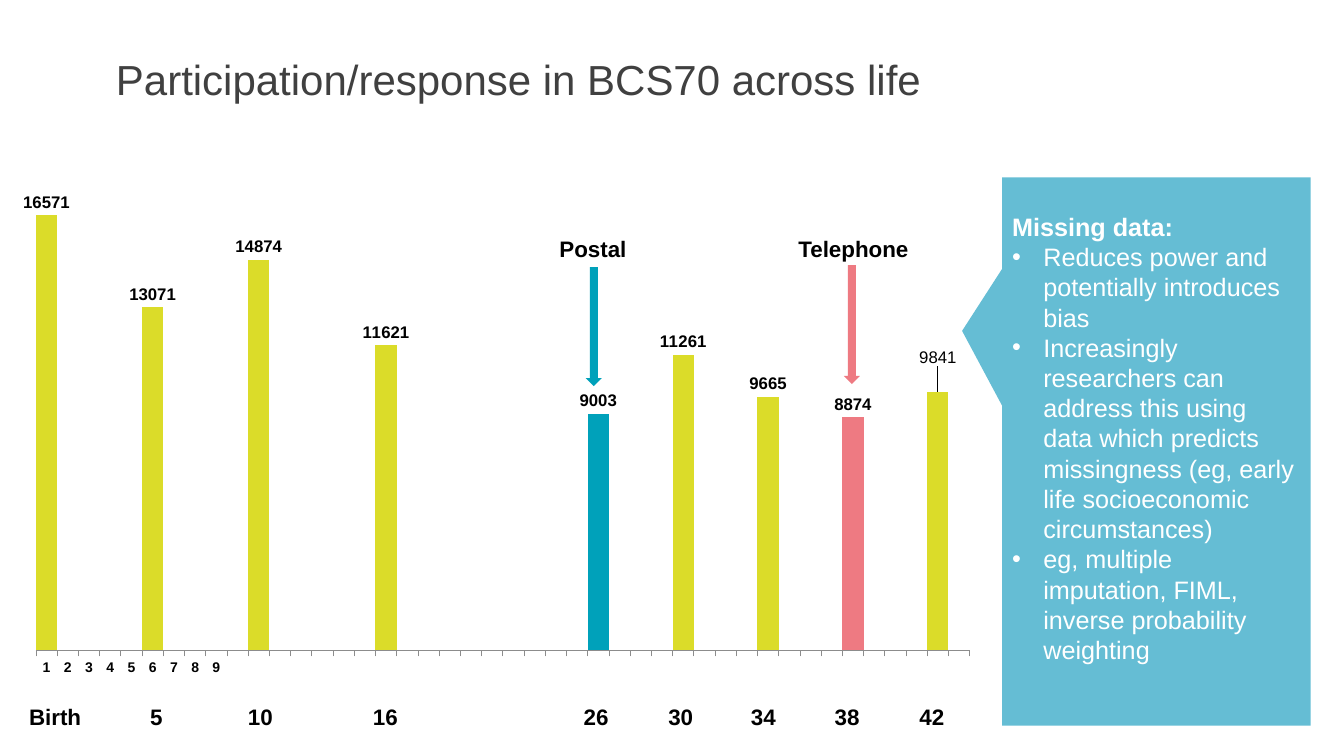
from lxml import etree
from pptx import Presentation
from pptx import util as u
from pptx.chart.data import CategoryChartData
from pptx.dml.color import RGBColor
from pptx.enum import chart as charts, shapes, text
from pptx.oxml import parse_xml
from pptx.oxml.ns import nsdecls, qn

FONT = "Arial"
COLOURS = {
    "black": "000000",
    "white": "FFFFFF",
    "title": "404040",
    "axis": "8C8C8C",
    "cohort": "DBDC29",
    "postal": "00A1BA",
    "telephone": "EE7A82",
    "callout": "65BDD4",
}
RESPONSES = {0: 16571, 5: 13071, 10: 14874, 16: 11621, 26: 9003,
             30: 11261, 34: 9665, 38: 8874, 42: 9842}
HIGHLIGHTS = {26: "postal", 38: "telephone"}
AGE_LABELS = [("Birth", 0.19), ("5", 1.39), ("10", 2.36), ("16", 3.6), ("26", 5.69),
              ("30", 6.53), ("34", 7.35), ("38", 8.18), ("42", 9.02)]
MODES = [("Postal", 5.45, 5.81, 2.65, "postal"),
         ("Telephone", 7.82, 8.37, 2.63, "telephone")]
MISSING_DATA_POINTS = [
    "Reduces power and potentially introduces bias",
    "Increasingly researchers can address this using data which predicts "
    "missingness (eg, early life socioeconomic circumstances)",
    "eg, multiple imputation, FIML, inverse probability weighting",
]
LEADER_LINES_OFF = (
    f'<c:extLst {nsdecls("c")}><c:ext uri="{{CE6537A1-D6FC-4f65-9D91-7224C49458BB}}" '
    'xmlns:c15="http://schemas.microsoft.com/office/drawing/2012/chart">'
    '<c15:showLeaderLines val="0"/></c:ext></c:extLst>')


def colour(name):
    return RGBColor.from_string(COLOURS[name])


def format_font(font, size, name="black", bold=False):
    font.name = FONT
    font.size = u.Pt(size)
    font.bold = bold
    font.color.rgb = colour(name)


def write_text(paragraph, content, size=16, name="black", bold=True):
    paragraph.alignment = text.PP_ALIGN.LEFT
    run = paragraph.add_run()
    run.text = content
    format_font(run.font, size, name, bold)


def add_label(slide, content, left, top, width):
    box = slide.shapes.add_textbox(
        u.Inches(left), u.Inches(top), u.Inches(width), u.Inches(0.37))
    box.text_frame.word_wrap = True
    write_text(box.text_frame.paragraphs[0], content)


def add_filled_shape(slide, kind, left, top, width, height, fill):
    shape = slide.shapes.add_shape(
        kind, u.Inches(left), u.Inches(top), u.Inches(width), u.Inches(height))
    shape.shadow.inherit = False
    shape.fill.solid()
    shape.fill.fore_color.rgb = colour(fill)
    shape.line.fill.background()
    return shape


def add_bullet(paragraph):
    properties = paragraph._p.get_or_add_pPr()
    indent = u.Inches(0.31)
    properties.set("marL", str(indent))
    properties.set("indent", str(-indent))
    etree.SubElement(properties, qn("a:buFont")).set("typeface", FONT)
    etree.SubElement(properties, qn("a:buChar")).set("char", "•")


def manual_layout(**settings):
    items = "".join(f'<c:{key} val="{value}"/>' for key, value in settings.items())
    return parse_xml(
        f'<c:layout {nsdecls("c")}><c:manualLayout>{items}</c:manualLayout></c:layout>')


def set_title(slide):
    title = slide.shapes.title
    title.left, title.top = u.Inches(1.15), u.Inches(0.56)
    title.width, title.height = u.Inches(9.3), u.Inches(0.5)
    frame = title.text_frame
    frame.margin_left = frame.margin_right = frame.margin_top = frame.margin_bottom = 0
    frame.vertical_anchor = text.MSO_ANCHOR.MIDDLE
    frame.paragraphs[0].line_spacing = 0.9
    write_text(frame.paragraphs[0], "Participation/response in BCS70 across life",
               size=30, name="title", bold=False)


def format_axes(chart):
    values = chart.value_axis
    values.minimum_scale, values.maximum_scale = 0, 18000
    values.has_major_gridlines = False
    values.visible = False
    ages = chart.category_axis
    ages.has_major_gridlines = False
    ages.major_tick_mark = charts.XL_TICK_MARK.OUTSIDE
    ages.minor_tick_mark = charts.XL_TICK_MARK.NONE
    ages.format.line.color.rgb = colour("axis")
    ages.format.line.width = u.Pt(0.5)
    format_font(ages.tick_labels.font, 10, bold=True)
    body = ages._element.find(qn("c:txPr")).find(qn("a:bodyPr"))
    body.set("rot", "0")
    body.set("vert", "horz")


def format_bars(plot):
    plot.gap_width = 0
    plot.overlap = 80
    plot.vary_by_categories = False
    bars = plot.series[0]
    bars.format.fill.solid()
    bars.format.fill.fore_color.rgb = colour("cohort")
    for age, name in HIGHLIGHTS.items():
        fill = bars.points[age].format.fill
        fill.solid()
        fill.fore_color.rgb = colour(name)
    labels = bars.data_labels
    labels.show_value = True
    labels.position = charts.XL_LABEL_POSITION.OUTSIDE_END
    format_font(labels.font, 12, bold=True)
    latest = bars.points[42].data_label
    write_text(latest.text_frame.paragraphs[0], "9841", size=12, bold=False)
    latest.position = charts.XL_LABEL_POSITION.OUTSIDE_END
    element = labels._element.find(qn("c:dLbl"))
    element.find(qn("c:idx")).addnext(manual_layout(x=0, y=-0.04))
    labels._element.append(parse_xml(LEADER_LINES_OFF))


def add_response_chart(slide):
    data = CategoryChartData()
    data.categories = [str(number) if number < 10 else "" for number in range(1, 45)]
    data.add_series("Series 1", [RESPONSES.get(age) for age in range(44)])
    chart = slide.shapes.add_chart(
        charts.XL_CHART_TYPE.COLUMN_CLUSTERED, u.Inches(0.23), u.Inches(1.71),
        u.Inches(9.58), u.Inches(5.33), data).chart
    chart.has_legend = False
    chart.has_title = False
    format_font(chart.font, 10)
    format_axes(chart)
    format_bars(chart.plots[0])
    area = chart._chartSpace.chart.plotArea
    for layout in area.findall(qn("c:layout")):
        area.remove(layout)
    area.insert(0, manual_layout(layoutTarget="inner", xMode="edge", yMode="edge",
                                 x=0.01, y=0.01, w=0.97, h=0.88))


def add_callout(slide):
    callout = add_filled_shape(slide, shapes.MSO_SHAPE.RECTANGULAR_CALLOUT,
                               9.94, 1.76, 3.06, 5.44, "callout")
    callout.adjustments[0] = -0.63
    callout.adjustments[1] = -0.22
    frame = callout.text_frame
    frame.word_wrap = True
    frame.vertical_anchor = text.MSO_ANCHOR.MIDDLE
    frame.margin_bottom = u.Inches(0.32)
    write_text(frame.paragraphs[0], "Missing data:", size=18, name="white")
    for point in MISSING_DATA_POINTS:
        paragraph = frame.add_paragraph()
        add_bullet(paragraph)
        write_text(paragraph, point, size=18, name="white", bold=False)


def main():
    presentation = Presentation()
    presentation.slide_width = u.Inches(13.33)
    presentation.slide_height = u.Inches(7.5)
    slide = presentation.slides.add_slide(presentation.slide_layouts[5])
    set_title(slide)
    add_response_chart(slide)
    for age, left in AGE_LABELS:
        add_label(slide, age, left, 6.93, 1.18)
    for mode, label_left, arrow_left, arrow_top, name in MODES:
        add_label(slide, mode, label_left, 2.28, 2.05)
        add_filled_shape(slide, shapes.MSO_SHAPE.DOWN_ARROW,
                         arrow_left, arrow_top, 0.16, 1.18, name)
    add_callout(slide)
    presentation.save("out.pptx")


if __name__ == "__main__":
    main()
